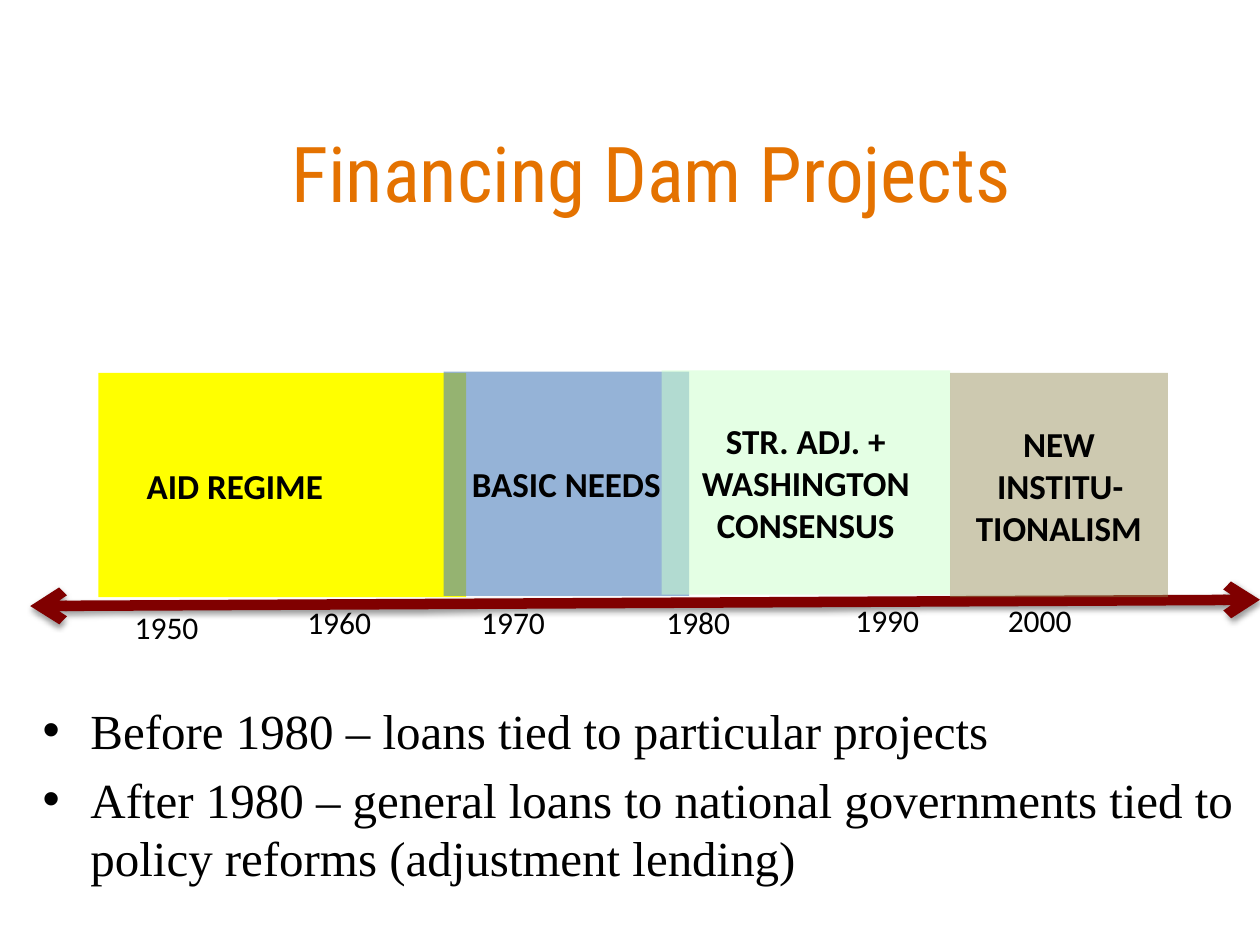
from lxml import etree
from pptx import Presentation
from pptx.dml.color import RGBColor
from pptx.enum.shapes import MSO_CONNECTOR, MSO_SHAPE
from pptx.enum.text import MSO_ANCHOR, PP_ALIGN
from pptx.oxml.ns import qn
from pptx.util import Inches, Pt

STRAIGHT, RECT = MSO_CONNECTOR.STRAIGHT, MSO_SHAPE.RECTANGLE
TOP, MIDDLE = MSO_ANCHOR.TOP, MSO_ANCHOR.MIDDLE
LEFT, CENTER = PP_ALIGN.LEFT, PP_ALIGN.CENTER

COLORS = {
    "title": "E47200", "text": "000000", "axis": "800000",
    "aid": "FFFF00", "needs": "4F81BD", "consensus": "CCFFCC", "new": "948A54",
}
FORMATS = {
    "title": {"name": "Roboto Condensed", "size": Pt(44)},
    "body": {"name": "Times New Roman", "size": Pt(28)},
    "year": {"name": "Calibri", "size": Pt(18)},
    "era": {"name": "Calibri", "size": Pt(20), "bold": True},
}
ERAS = [
    ("AID REGIME", "aid", 100, 0.78, 2.96, 2.92, 0.85),
    ("BASIC NEEDS", "needs", 60, 3.52, 2.95, 1.95, 0.1),
    ("STR. ADJ. + WASHINGTON CONSENSUS", "consensus", 53, 5.25, 2.94, 2.29, 0.1),
    ("NEW INSTITU-TIONALISM", "new", 46, 7.54, 2.96, 1.73, 0.1),
]
YEARS = [("1950", 0.97, 4.78), ("1960", 2.34, 4.74), ("1970", 3.72, 4.74),
         ("1980", 5.19, 4.74), ("1990", 6.69, 4.72), ("2000", 7.9, 4.72)]
BULLETS = [
    "Before 1980 – loans tied to particular projects",
    "After 1980 – general loans to national governments tied to "
    "policy reforms (adjustment lending)",
]


def add_node(parent, tag, **attrs):
    """Append a DrawingML element and return it."""
    return etree.SubElement(parent, qn(tag), {k: str(v) for k, v in attrs.items()})


def write(sp, lines, style, color="text", align=LEFT, anchor=TOP):
    """Fill a shape with one formatted paragraph per line."""
    tf = sp.text_frame
    tf.word_wrap = True
    tf.vertical_anchor = anchor
    for i, line in enumerate(lines):
        p = tf.add_paragraph() if i else tf.paragraphs[0]
        p.alignment = align
        r = p.add_run()
        r.text = line
        r.font.color.rgb = RGBColor.from_string(COLORS[color])
        for key, value in FORMATS[style].items():
            setattr(r.font, key, value)
    return tf


def add_title(s, x, y, w, h):
    """Place the centred slide title."""
    sp = s.shapes.add_textbox(x, y, w, h)
    write(sp, ["Financing Dam Projects"], "title", "title", CENTER, MIDDLE)


def add_bullets(s, x, y, w, h):
    """Place the bulleted notes on lending."""
    tf = write(s.shapes.add_textbox(x, y, w, h), BULLETS, "body")
    for p in tf.paragraphs:
        p.space_before = Pt(5.6)
        pPr = p._p.get_or_add_pPr()
        pPr.set("marL", str(Inches(0.38)))
        pPr.set("indent", str(-Inches(0.38)))
        add_node(pPr, "a:buFont", typeface="Arial")
        add_node(pPr, "a:buChar", char="•")


def add_axis(s, x1, y1, x2, y2):
    """Draw the double-headed time axis with its soft shadow."""
    line = s.shapes.add_connector(STRAIGHT, x1, y1, x2, y2)
    line.line.color.rgb = RGBColor.from_string(COLORS["axis"])
    line.line.width = Pt(6)
    ln = line.line._get_or_add_ln()
    for tag in ("a:headEnd", "a:tailEnd"):
        add_node(ln, tag, type="arrow")
    effects = add_node(line._element.spPr, "a:effectLst")
    shadow = add_node(effects, "a:outerShdw", blurRad=Pt(3.1), dist=Pt(1.6),
                      dir=90 * 60000, rotWithShape=0)
    clr = add_node(shadow, "a:srgbClr", val=COLORS["text"])
    add_node(clr, "a:alpha", val=38000)


def add_year(s, text, x, y, w, h):
    """Place one year label under the axis."""
    write(s.shapes.add_textbox(x, y, w, h), [text], "year")


def add_era(s, text, color, opacity, inset, x, y, w, h):
    """Draw one translucent era block with its label."""
    sp = s.shapes.add_shape(RECT, x, y, w, h)
    sp.shadow.inherit = False
    sp.line.fill.background()
    sp.fill.solid()
    sp.fill.fore_color.rgb = RGBColor.from_string(COLORS[color])
    if opacity < 100:
        clr = sp._element.spPr.find(qn("a:solidFill")).find(qn("a:srgbClr"))
        add_node(clr, "a:alpha", val=opacity * 1000)
    tf = write(sp, [text], "era", align=CENTER, anchor=MIDDLE)
    tf.margin_right = inset


def main():
    """Build and save the slide."""
    prs = Presentation()
    prs.slide_width, prs.slide_height = Inches(10), Inches(7.5)
    s = prs.slides.add_slide(prs.slide_layouts[6])
    add_title(s, Inches(0.92), Inches(0.72), Inches(8.5), Inches(1.28))
    add_bullets(s, Inches(0.24), Inches(5.51), Inches(9.76), Inches(1.99))
    add_axis(s, Inches(0.24), Inches(4.81), Inches(10), Inches(4.76))
    for text, x, y in YEARS:
        add_year(s, text, Inches(x), Inches(y), Inches(0.85), Inches(0.4))
    for text, color, opacity, x, y, w, inset in ERAS:
        add_era(s, text, color, opacity, Inches(inset),
                Inches(x), Inches(y), Inches(w), Inches(1.78))
    prs.save("out.pptx")


if __name__ == "__main__":
    main()
